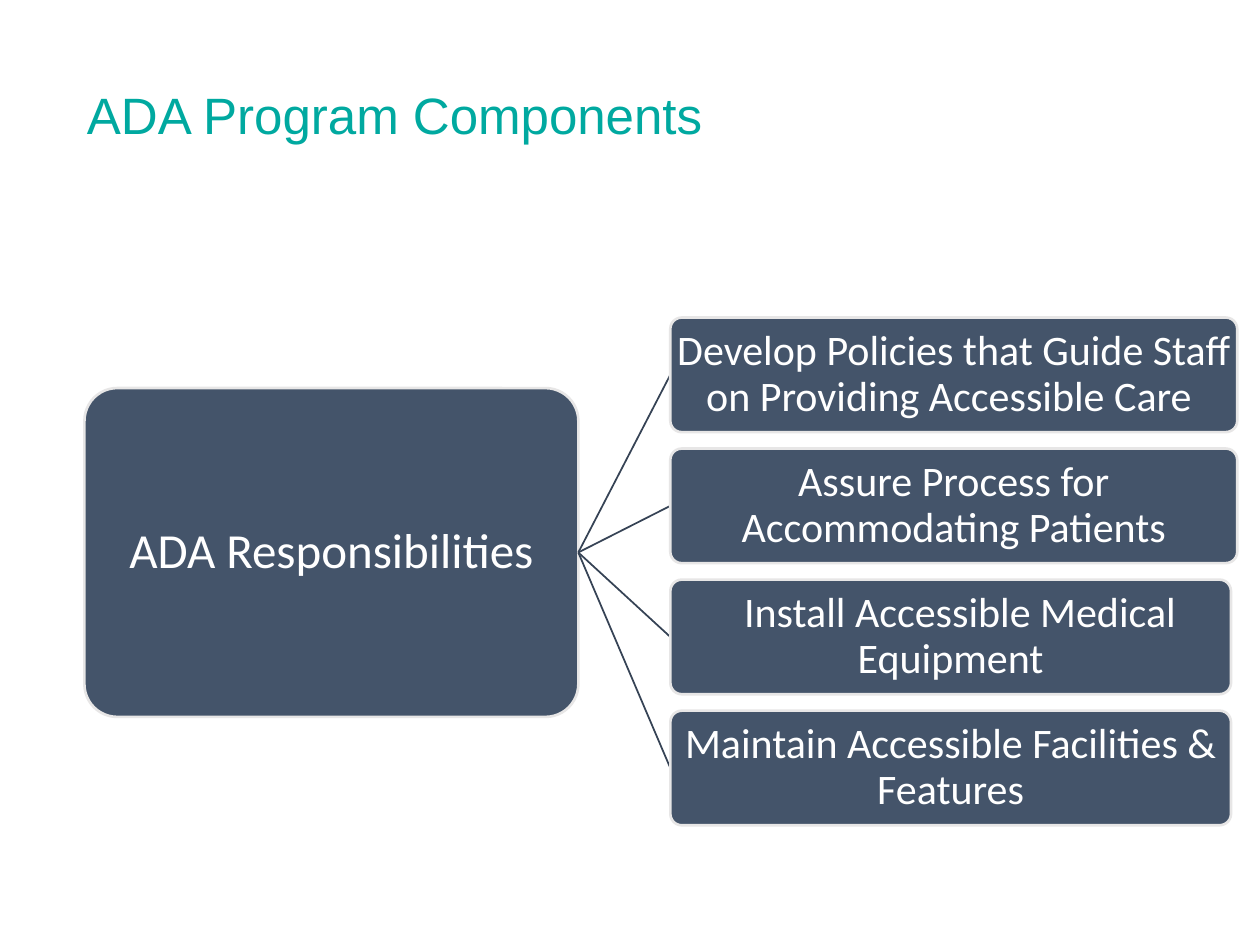
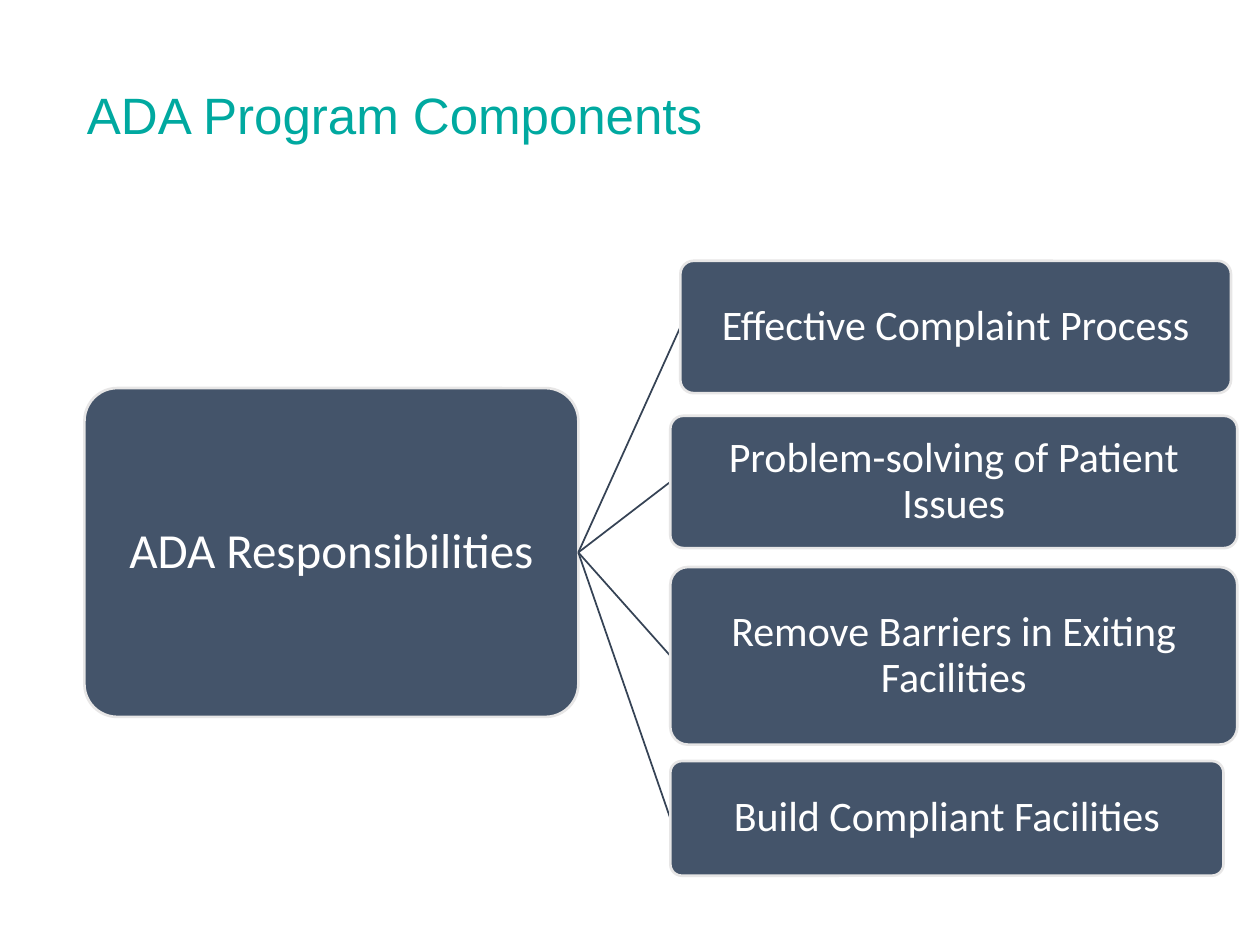
"""Builds two slides that fan the ADA responsibilities out into program components."""
from dataclasses import dataclass

from pptx import Presentation
from pptx.dml.color import RGBColor
from pptx.enum.shapes import MSO_CONNECTOR, MSO_SHAPE
from pptx.enum.text import MSO_ANCHOR, PP_ALIGN
from pptx.oxml.ns import qn
from pptx.util import Inches, Pt
from lxml.etree import SubElement


@dataclass(frozen=True)
class Theme:
    teal: RGBColor = RGBColor(0x00, 0xA9, 0xA0)
    slate: RGBColor = RGBColor(0x44, 0x54, 0x6A)
    edge: RGBColor = RGBColor(0xE7, 0xE6, 0xE6)
    link: RGBColor = RGBColor(0x36, 0x43, 0x55)
    white: RGBColor = RGBColor(0xFF, 0xFF, 0xFF)
    head: str = "Arial"
    body: str = "Calibri"
    title: float = 29.2
    root: float = 28
    item: float = 24


class Deck:
    def __init__(self, theme):
        self.theme = theme
        self.show = Presentation()
        self.show.slide_width = Inches(10)
        self.show.slide_height = Inches(7.5)
        self.slide = None

    def page(self, title):
        self.slide = self.show.slides.add_slide(self.show.slide_layouts[6])
        spot = [Inches(v) for v in (0.69, 0.72, 8.62, 1.27)]
        box = self.slide.shapes.add_textbox(*spot)
        look = self.theme
        self.label(box, title, look.head, look.title, look.teal)

    def label(self, shape, text, face, size, color, pad=0.0, align=PP_ALIGN.LEFT):
        frame = shape.text_frame
        frame.word_wrap = True
        frame.margin_left = frame.margin_right = Inches(pad)
        frame.margin_top = frame.margin_bottom = Inches(pad)
        line = frame.paragraphs[0]
        line.text = text
        line.alignment = align
        line.line_spacing = 0.9
        line.font.name = face
        line.font.size = Pt(size)
        line.font.color.rgb = color
        return line

    def box(self, text, spot, size, indent=0):
        look = self.theme
        shape = self.slide.shapes.add_shape(
            MSO_SHAPE.ROUNDED_RECTANGLE, *[Inches(v) for v in spot])
        shape.adjustments[0] = 0.1
        shape.shadow.inherit = False
        shape.fill.solid()
        shape.fill.fore_color.rgb = look.slate
        shape.line.color.rgb = look.edge
        shape.line.width = Pt(1.5)
        line = self.label(shape, text, look.body, size, look.white,
                          0.02, PP_ALIGN.CENTER)
        shape.text_frame.vertical_anchor = MSO_ANCHOR.MIDDLE
        if indent:
            line._p.get_or_add_pPr().set("indent", str(Inches(indent)))
        return shape

    def link(self, root):
        wire = self.slide.shapes.add_connector(MSO_CONNECTOR.STRAIGHT, 0, 0, 0, 0)
        wire.line.color.rgb = self.theme.link
        wire.line.width = Pt(1)
        SubElement(wire._element.spPr, qn("a:effectLst"))
        wire.begin_connect(root, 3)
        return wire

    def fan(self, root, items):
        hub = self.box(root, (0.67, 3.08, 3.92, 2.61), self.theme.root)
        for text, spot, indent in items:
            wire = self.link(hub)
            wire.end_connect(self.box(text, spot, self.theme.item, indent), 1)


def main():
    left = 5.32
    duties = [
        ("Develop Policies that Guide Staff on Providing Accessible Care ", 4.5, 0),
        ("Assure Process for Accommodating Patients", 4.5, 0),
        ("Install Accessible Medical Equipment", 4.45, 0.15),
        ("Maintain Accessible Facilities & Features", 4.45, 0),
    ]
    first = [(text, (left, 2.52 + 1.04 * row, wide, 0.91), indent)
             for row, (text, wide, indent) in enumerate(duties)]
    second = [
        ("Effective Complaint Process", (5.4, 2.07, 4.37, 1.05), 0),
        ("Problem-solving of Patient Issues", (left, 3.3, 4.5, 1.05), 0),
        ("Remove Barriers in Exiting Facilities", (left, 4.5, 4.5, 1.41), 0),
        ("Build Compliant Facilities", (left, 6.04, 4.39, 0.91), 0),
    ]
    deck = Deck(Theme())
    for items in (first, second):
        deck.page("ADA Program Components")
        deck.fan("ADA Responsibilities", items)
    deck.show.save("out.pptx")


if __name__ == "__main__":
    main()
